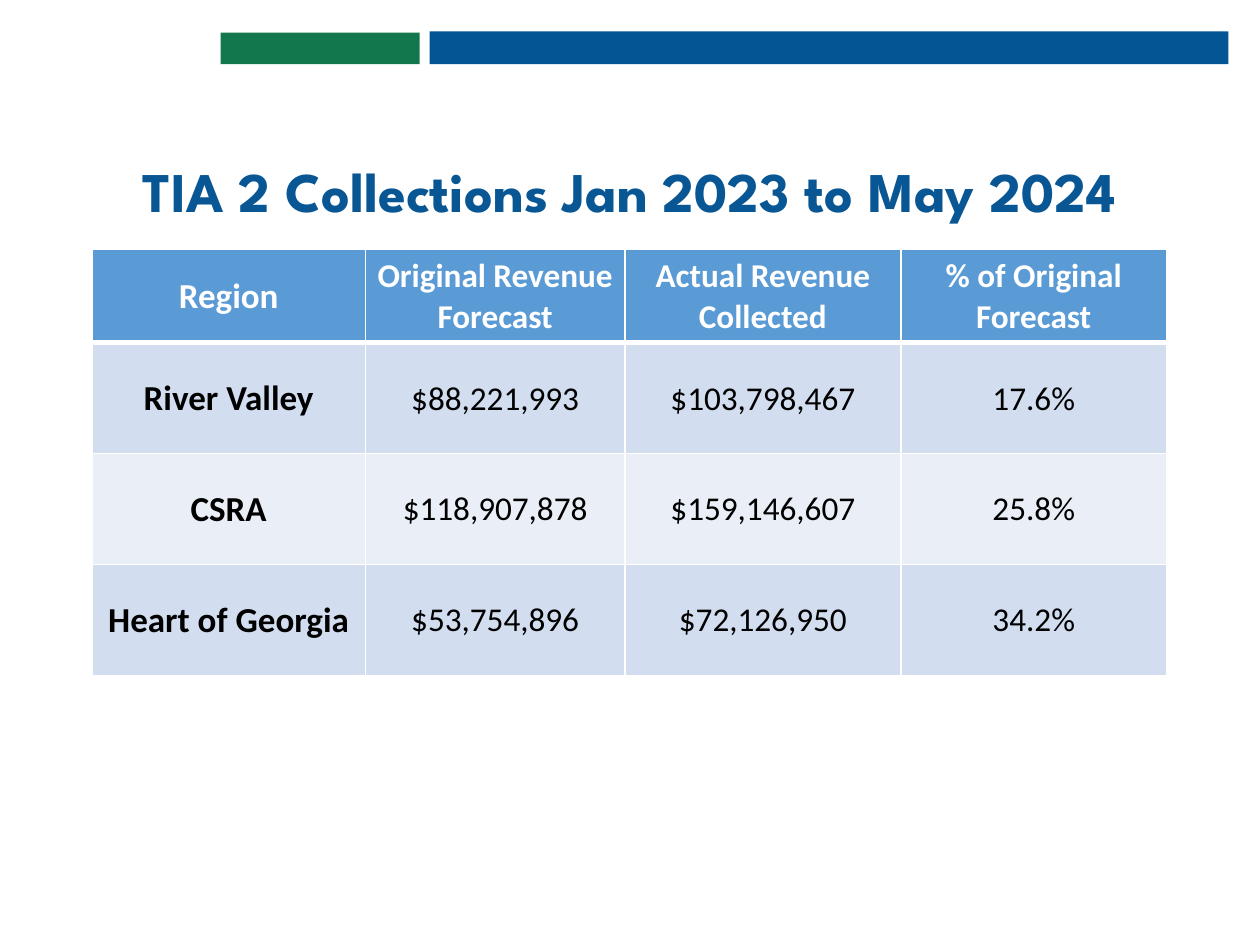
from lxml.etree import SubElement
from pptx import Presentation
from pptx.dml.color import RGBColor
from pptx.enum.shapes import MSO_SHAPE
from pptx.enum.text import MSO_ANCHOR, PP_ALIGN
from pptx.oxml.ns import qn
from pptx.util import Inches, Pt


def paint(fill, color):
    fill.solid()
    fill.fore_color.rgb = RGBColor.from_string(color)


def add_border(cell, side, points):
    """Draw a white line on one side (L, R, T or B) of a table cell."""
    line = SubElement(cell._tc.get_or_add_tcPr(), qn(f"a:ln{side}"), w=str(Pt(points)))
    SubElement(SubElement(line, qn("a:solidFill")), qn("a:srgbClr"), val="FFFFFF")


presentation = Presentation()
presentation.slide_width = Inches(10)
presentation.slide_height = Inches(7.5)
slide = presentation.slides.add_slide(presentation.slide_layouts[6])

# Header bars share one bottom edge
BAR_BOTTOM = 0.51
for left, width, height, color in [(3.41, 6.34, 0.26, "035594"), (1.75, 1.58, 0.25, "12784B")]:
    bar = slide.shapes.add_shape(
        MSO_SHAPE.RECTANGLE, Inches(left), Inches(BAR_BOTTOM - height), Inches(width), Inches(height)
    )
    bar.shadow.inherit = False
    bar.line.fill.background()
    paint(bar.fill, color)

# Title
title = slide.shapes.add_textbox(0, Inches(1.2), presentation.slide_width, Inches(0.63))
title.text_frame.word_wrap = True
title.text_frame.vertical_anchor = MSO_ANCHOR.BOTTOM
paragraph = title.text_frame.paragraphs[0]
paragraph.text = "TIA 2 Collections Jan 2023 to May 2024"
paragraph.alignment = PP_ALIGN.CENTER
paragraph.line_spacing = 0.9
paragraph.font.name = "League Spartan"
paragraph.font.size = Pt(32)
paragraph.font.bold = True
paragraph.font.color.rgb = RGBColor.from_string("085694")

# Revenue table
ROWS = [
    ["Region", "Original Revenue Forecast", "Actual Revenue Collected", "% of Original Forecast"],
    ["River Valley", "$88,221,993", "$103,798,467", "17.6%"],
    ["CSRA", "$118,907,878", "$159,146,607", "25.8%"],
    ["Heart of Georgia", "$53,754,896", "$72,126,950", "34.2%"],
]
COLUMN_WIDTHS = [2.17, 2.06, 2.19, 2.11]
ROW_HEIGHTS = [0.74, 0.88, 0.88, 0.88]
ROW_FILLS = ["5B9BD5", "D2DEEF", "EAEFF7", "D2DEEF"]

table = slide.shapes.add_table(
    len(ROWS), len(COLUMN_WIDTHS), Inches(0.73), Inches(1.98),
    Inches(sum(COLUMN_WIDTHS)), Inches(sum(ROW_HEIGHTS)),
).table
for column, width in zip(table.columns, COLUMN_WIDTHS):
    column.width = Inches(width)

for row_index, texts in enumerate(ROWS):
    table.rows[row_index].height = Inches(ROW_HEIGHTS[row_index])
    is_header = row_index == 0
    for column_index, text in enumerate(texts):
        is_region = column_index == 0
        cell = table.cell(row_index, column_index)
        cell.vertical_anchor = MSO_ANCHOR.MIDDLE
        cell.margin_left = cell.margin_right = cell.margin_top = Inches(0.01)
        cell.margin_bottom = 0
        add_border(cell, "L", 1)
        add_border(cell, "R", 1)
        add_border(cell, "T", 3 if row_index == 1 else 1)
        add_border(cell, "B", 3 if is_header else 1)
        paint(cell.fill, ROW_FILLS[row_index])

        paragraph = cell.text_frame.paragraphs[0]
        paragraph.text = text
        paragraph.alignment = PP_ALIGN.CENTER
        paragraph.font.name = "Calibri"
        paragraph.font.size = Pt(20 if is_region else 19)
        paragraph.font.bold = is_header or is_region
        paragraph.font.color.rgb = RGBColor.from_string("FFFFFF" if is_header else "000000")

presentation.save("out.pptx")
